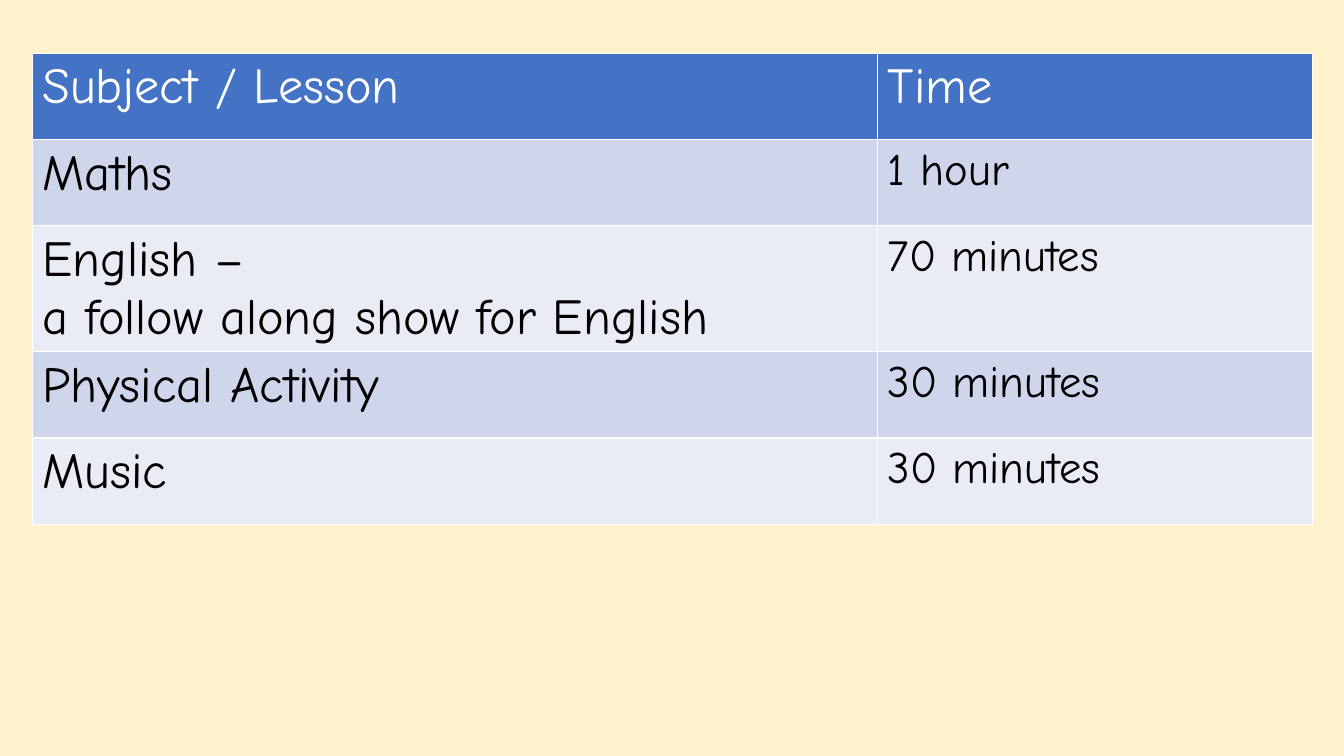
from pptx import Presentation
from pptx.dml.color import RGBColor
from pptx.util import Cm, Pt

FONT = "Comic Neue"
COLOURS = {
    "page": "FFF2CC",
    "header": "4472C4",
    "odd": "CFD5EA",
    "even": "E9EBF5",
    "header_text": "FFFFFF",
    "text": "000000",
}
LESSONS = [
    ("Subject / Lesson", "Time"),
    ("Maths", "1 hour"),
    ("English –\na follow along show for English", "70 minutes"),
    ("Physical Activity", "30 minutes"),
    ("Music", "30 minutes"),
]
COLUMN_WIDTHS = [21.31, 10.95]
ROW_HEIGHTS = [2.17, 2.17, 3.17, 2.17, 2.17]

deck = Presentation()
deck.slide_width = Cm(33.87)
deck.slide_height = Cm(19.05)
page = deck.slides.add_slide(deck.slide_layouts[6])
page.background.fill.solid()
page.background.fill.fore_color.rgb = RGBColor.from_string(COLOURS["page"])

timetable = page.shapes.add_table(
    len(LESSONS), len(COLUMN_WIDTHS),
    Cm(0.81), Cm(1.35), Cm(sum(COLUMN_WIDTHS)), Cm(sum(ROW_HEIGHTS)),
).table
for column, width in zip(timetable.columns, COLUMN_WIDTHS):
    column.width = Cm(width)
for row, height in zip(timetable.rows, ROW_HEIGHTS):
    row.height = Cm(height)

for row_index, lesson in enumerate(LESSONS):
    is_header = row_index == 0
    band = "header" if is_header else "odd" if row_index % 2 else "even"
    ink = "header_text" if is_header else "text"
    for column_index, words in enumerate(lesson):
        cell = timetable.cell(row_index, column_index)
        cell.fill.solid()
        cell.fill.fore_color.rgb = RGBColor.from_string(COLOURS[band])
        cell.text_frame.text = words
        for para in cell.text_frame.paragraphs:
            for span in para.runs:
                span.font.name = FONT
                span.font.size = Pt(36 if is_header or column_index == 0 else 32)
                span.font.bold = False
                span.font.color.rgb = RGBColor.from_string(COLOURS[ink])

deck.save("out.pptx")
